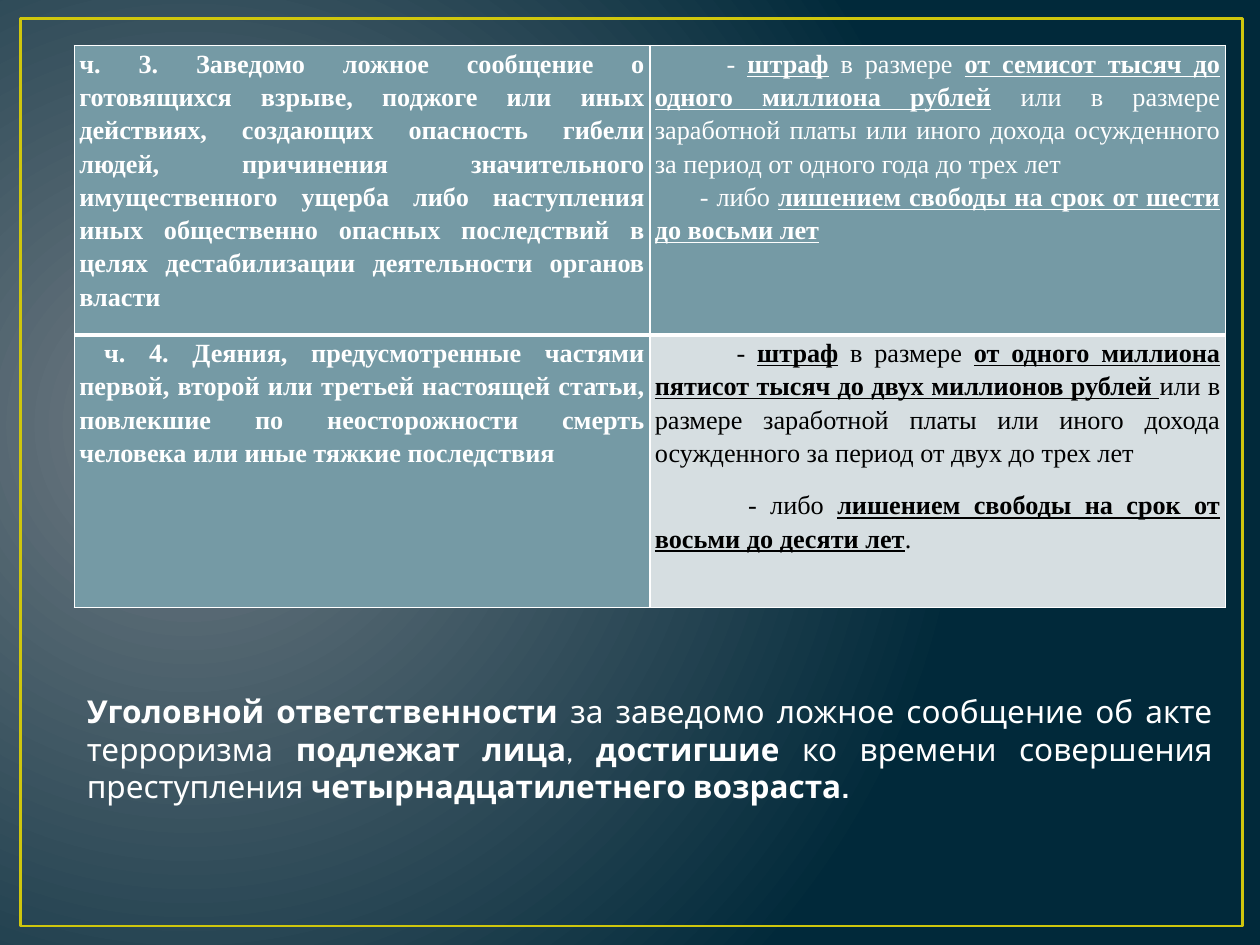
from lxml import etree
from pptx import Presentation
from pptx.dml.color import RGBColor
from pptx.enum.shapes import MSO_SHAPE
from pptx.enum.text import MSO_AUTO_SIZE, PP_ALIGN
from pptx.oxml.ns import qn
from pptx.util import Cm, Pt

RECT = MSO_SHAPE.RECTANGLE
JUSTIFY = PP_ALIGN.JUSTIFY
GROW = MSO_AUTO_SIZE.SHAPE_TO_FIT_TEXT

WHITE, BLACK, YELLOW = "FFFFFF", "000000", "CFC60D"
TEAL, PALE = "759AA5", "D6DEE1"
GLOW, NAVY = "717C84", "01293A"


def rgb(value):
    return RGBColor.from_string(value)


class SlideBuilder:
    table_font, note_font = "Times New Roman", "Cabin"
    table_size, note_size = 15, 18
    line_spacing = 1.15

    def __init__(self, slide):
        self.s = slide

    def background(self, inner, outer, focus):
        fill = self.s.background.fill
        fill.gradient()
        for stop, color, pos in zip(fill.gradient_stops, (inner, outer), (0, 1)):
            stop.color.rgb = rgb(color)
            stop.position = pos
        grad = self.s.element.xpath(".//p:bg//a:gradFill")[0]
        for lin in grad.findall(qn("a:lin")):
            grad.remove(lin)
        circle = etree.SubElement(grad, qn("a:path"), {"path": "circle"})
        sides = {side: str(pct * 1000) for side, pct in zip("ltrb", focus)}
        etree.SubElement(circle, qn("a:fillToRect"), sides)

    def frame(self, x, y, w, h, color):
        sp = self.s.shapes.add_shape(RECT, Cm(x), Cm(y), Cm(w), Cm(h))
        sp.shadow.inherit = False
        sp.fill.background()
        sp.line.color.rgb = rgb(color)
        sp.line.width = Pt(1.5)

    def paragraph(self, p, runs, font, size, color, indent=0):
        """Runs are (text, style) pairs; style holds b for bold, u for underlined."""
        p.alignment = JUSTIFY
        if indent:
            p._p.get_or_add_pPr().set("indent", str(Cm(indent)))
        for text, style in runs:
            r = p.add_run()
            r.text = text
            r.font.name, r.font.size = font, Pt(size)
            r.font.bold = "b" in style
            r.font.underline = "u" in style
            r.font.color.rgb = rgb(color)

    def borders(self, cell, widths):
        tc_pr = cell._tc.get_or_add_tcPr()
        for side, width in zip("LRTB", widths):
            ln = etree.SubElement(tc_pr, qn("a:ln" + side), {"w": str(Pt(width))})
            fill = etree.SubElement(ln, qn("a:solidFill"))
            etree.SubElement(fill, qn("a:srgbClr"), {"val": WHITE})

    def cell(self, cell, paragraphs, fill, color, widths, gap=0):
        self.borders(cell, widths)
        cell.fill.solid()
        cell.fill.fore_color.rgb = rgb(fill)
        cell.margin_left = cell.margin_right = Cm(0.1)
        cell.margin_top = cell.margin_bottom = 0
        tf = cell.text_frame
        for i, (indent, runs) in enumerate(paragraphs):
            p = tf.add_paragraph() if i else tf.paragraphs[0]
            p.line_spacing = self.line_spacing
            p.space_before = Pt(gap)
            self.paragraph(p, runs, self.table_font, self.table_size, color, indent)

    def table(self, x, y, w, row_heights, rows):
        table = self.s.shapes.add_table(
            len(rows), len(rows[0]), Cm(x), Cm(y), Cm(w), Cm(sum(row_heights))).table
        for row, height in zip(table.rows, row_heights):
            row.height = Cm(height)
        for i, row in enumerate(rows):
            # Thick rule between the two rows, thin ones elsewhere
            widths = (1, 1, 3, 1) if i else (1, 1, 1, 3)
            for j, options in enumerate(row):
                self.cell(table.cell(i, j), widths=widths, **options)

    def note(self, x, y, w, h, runs):
        tf = self.s.shapes.add_textbox(Cm(x), Cm(y), Cm(w), Cm(h)).text_frame
        tf.word_wrap = True
        tf.auto_size = GROW
        self.paragraph(tf.paragraphs[0], runs, self.note_font, self.note_size, WHITE)


# Table wording: each paragraph is (first-line indent in cm, runs)
PART_3 = [(0, [(
    "ч. 3. Заведомо ложное сообщение о готовящихся взрыве, поджоге или иных "
    "действиях, создающих опасность гибели людей, причинения значительного "
    "имущественного ущерба либо наступления иных общественно опасных последствий "
    "в целях дестабилизации деятельности органов власти", "b")])]
PENALTY_3 = [
    (1.45, [("- ", ""), ("штраф", "bu"), (" в размере ", ""),
            ("от семисот тысяч до одного миллиона рублей", "bu"),
            (" или в размере заработной платы или иного дохода осужденного "
             "за период от одного года до трех лет", "")]),
    (0.91, [("- либо ", ""),
            ("лишением свободы на срок от шести до восьми лет", "bu")]),
]
PART_4 = [(0.5, [(
    "ч. 4. Деяния, предусмотренные частями первой, второй или третьей настоящей "
    "статьи, повлекшие по неосторожности смерть человека или иные тяжкие "
    "последствия", "b")])]
PENALTY_4 = [
    (1.65, [("- ", ""), ("штраф", "bu"), (" в размере ", ""),
            ("от одного миллиона пятисот тысяч до двух миллионов рублей ", "bu"),
            ("или в размере заработной платы или иного дохода осужденного "
             "за период от двух до трех лет", "")]),
    (1.88, [("- либо ", ""),
            ("лишением свободы на срок от восьми до десяти лет", "bu"), (".", "")]),
]
AGE_NOTE = [
    ("Уголовной ответственности ", "b"),
    ("за заведомо ложное сообщение об акте терроризма ", ""),
    ("подлежат лица", "b"), (", ", ""), ("достигшие", "b"),
    (" ко времени совершения преступления ", ""),
    ("четырнадцатилетнего возраста.", "b"),
]


def main():
    prs = Presentation()
    prs.slide_width, prs.slide_height = Cm(25.4), Cm(19.05)
    b = SlideBuilder(prs.slides.add_slide(prs.slide_layouts[6]))

    # Backdrop
    b.background(GLOW, NAVY, (15, 50, 85, 60))
    b.frame(0.41, 0.38, 24.64, 18.29, YELLOW)

    # Offences and penalties
    b.table(1.5, 0.92, 23.2, (5.83, 5.5), [
        [dict(paragraphs=PART_3, fill=TEAL, color=WHITE),
         dict(paragraphs=PENALTY_3, fill=TEAL, color=WHITE)],
        [dict(paragraphs=PART_4, fill=TEAL, color=WHITE),
         dict(paragraphs=PENALTY_4, fill=PALE, color=BLACK, gap=11)],
    ])

    # Age of responsibility
    b.note(1.5, 13.82, 23.2, 2.57, AGE_NOTE)

    prs.save("out.pptx")


if __name__ == "__main__":
    main()
